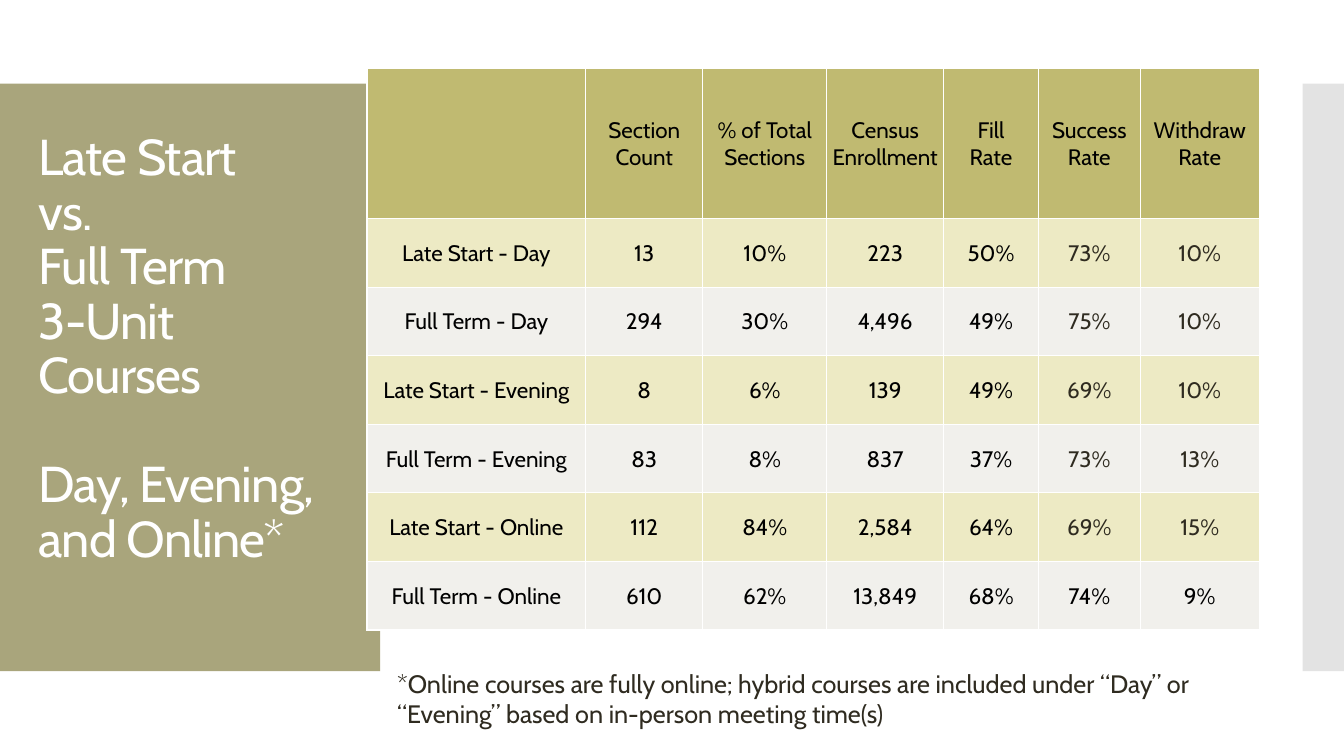
import pptx
import pptx.dml.color
import pptx.enum.shapes
import pptx.enum.text
import pptx.oxml
import pptx.oxml.ns
import pptx.util

Inches = pptx.util.Inches
Pt = pptx.util.Pt
Align = pptx.enum.text.PP_ALIGN
Anchor = pptx.enum.text.MSO_ANCHOR

FONT = "Cabin"
BLACK, DARK, WHITE = "000000", "2F2B20", "FFFFFF"
OLIVE, GREY = "A9A57C", "C8C8C8"
HEAD, CREAM, PALE = "C0BA71", "EDEAC4", "F1F0EC"

TITLE = ["Late Start", "vs.", "Full Term", "3-Unit Courses",
         "Day, Evening, and Online*"]
NOTE = ("*Online courses are fully online; hybrid courses are included under "
        "“Day” or “Evening” based on in-person meeting time(s)")
ROWS = [
    ["", "Section Count", "% of Total Sections", "Census\nEnrollment",
     "Fill\nRate", "Success\nRate", "Withdraw Rate"],
    ["Late Start - Day", "13", "10%", "223", "50%", "73%", "10%"],
    ["Full Term - Day", "294", "30%", "4,496", "49%", "75%", "10%"],
    ["Late Start - Evening", "8", "6%", "139", "49%", "69%", "10%"],
    ["Full Term - Evening", "83", "8%", "837", "37%", "73%", "13%"],
    ["Late Start - Online", "112", "84%", "2,584", "64%", "69%", "15%"],
    ["Full Term - Online", "610", "62%", "13,849", "68%", "74%", "9%"],
]
WIDTHS = [2.17, 1.16, 1.23, 1.16, 0.94, 1.01, 1.18]
HEAD_H, ROW_H = 1.49, 0.68


def paint(fill, color):
    fill.solid()
    fill.fore_color.rgb = pptx.dml.color.RGBColor.from_string(color)


def style(frame, size, color, align=Align.LEFT):
    for para in frame.paragraphs:
        para.alignment = align
        for run in para.runs:
            run.font.name = FONT
            run.font.size = Pt(size)
            paint(run.font.fill, color)


def add_bar(slide, box, color, alpha=100):
    """Add a plain block; alpha is its opacity in percent."""
    bar = slide.shapes.add_shape(
        pptx.enum.shapes.MSO_SHAPE.RECTANGLE, *map(Inches, box))
    bar.shadow.inherit = False
    bar.line.fill.background()
    paint(bar.fill, color)
    if alpha < 100:
        tone = bar.element.spPr.find(".//" + pptx.oxml.ns.qn("a:srgbClr"))
        tone.append(pptx.oxml.parse_xml(
            f'<a:alpha {pptx.oxml.ns.nsdecls("a")} val="{alpha * 1000}"/>'))


def add_title(slide, box):
    title = slide.shapes.title
    slide.shapes.element.append(title.element)  # in front of the bars
    title.left, title.top, title.width, title.height = map(Inches, box)
    frame = title.text_frame
    frame.word_wrap = True
    frame.auto_size = pptx.enum.text.MSO_AUTO_SIZE.NONE
    frame.vertical_anchor = Anchor.MIDDLE
    frame.margin_bottom = Inches(0.59)
    frame.text = "\n".join(TITLE)
    style(frame, 36, WHITE)
    for para in frame.paragraphs:
        para.line_spacing = 0.9
        para.space_before = Pt(0)
        for run in para.runs:
            run.font.element.set("spc", "-60") if hasattr(
                run.font, "element") else run._r.get_or_add_rPr().set("spc", "-60")
    frame.paragraphs[-1].space_before = Pt(39)


def add_edges(cell):
    """Draw thin white borders; they must precede the fill in the XML."""
    props = cell._tc.get_or_add_tcPr()
    for spot, side in enumerate(("lnL", "lnR", "lnT", "lnB")):
        props.insert(spot, pptx.oxml.parse_xml(
            f'<a:{side} {pptx.oxml.ns.nsdecls("a")} w="12700"><a:solidFill>'
            f'<a:srgbClr val="{WHITE}"/></a:solidFill></a:{side}>'))


def fill_cell(cell, text, back, color):
    cell.text = text
    cell.vertical_anchor = Anchor.MIDDLE
    cell.margin_left = cell.margin_right = cell.margin_top = Inches(0.01)
    cell.margin_bottom = 0
    style(cell.text_frame, 16, color, Align.CENTER)
    paint(cell.fill, back)
    add_edges(cell)


def add_rates(slide, left, top):
    last = len(ROWS) - 1
    heights = [HEAD_H] + [ROW_H] * last
    size = Inches(sum(WIDTHS)), Inches(sum(heights))
    table = slide.shapes.add_table(
        len(ROWS), len(WIDTHS), Inches(left), Inches(top), *size).table
    for col, width in zip(table.columns, WIDTHS):
        col.width = Inches(width)
    for row, height in zip(table.rows, heights):
        row.height = Inches(height)
    for r, row in enumerate(ROWS):
        back = HEAD if r == 0 else CREAM if r % 2 else PALE
        for c, text in enumerate(row):
            color = DARK if c > 4 and 0 < r < last else BLACK
            fill_cell(table.cell(r, c), text, back, color)


def add_note(slide, box):
    frame = slide.shapes.add_textbox(*map(Inches, box)).text_frame
    frame.word_wrap = True
    frame.text = NOTE
    style(frame, 18, DARK)


def main():
    deck = pptx.Presentation()
    deck.slide_width, deck.slide_height = Inches(13.33), Inches(7.5)
    slide = deck.slides.add_slide(deck.slide_layouts.get_by_name("Title Only"))
    add_bar(slide, (0, 0.83, 3.77, 5.83), OLIVE)
    add_bar(slide, (12.92, 0.83, 0.41, 5.83), GREY, 50)
    add_title(slide, (0.28, 1.23, 3.22, 5.03))
    add_rates(slide, 3.64, 0.68)
    add_note(slide, (3.84, 6.58, 8.66, 0.71))
    deck.save("out.pptx")


if __name__ == "__main__":
    main()
